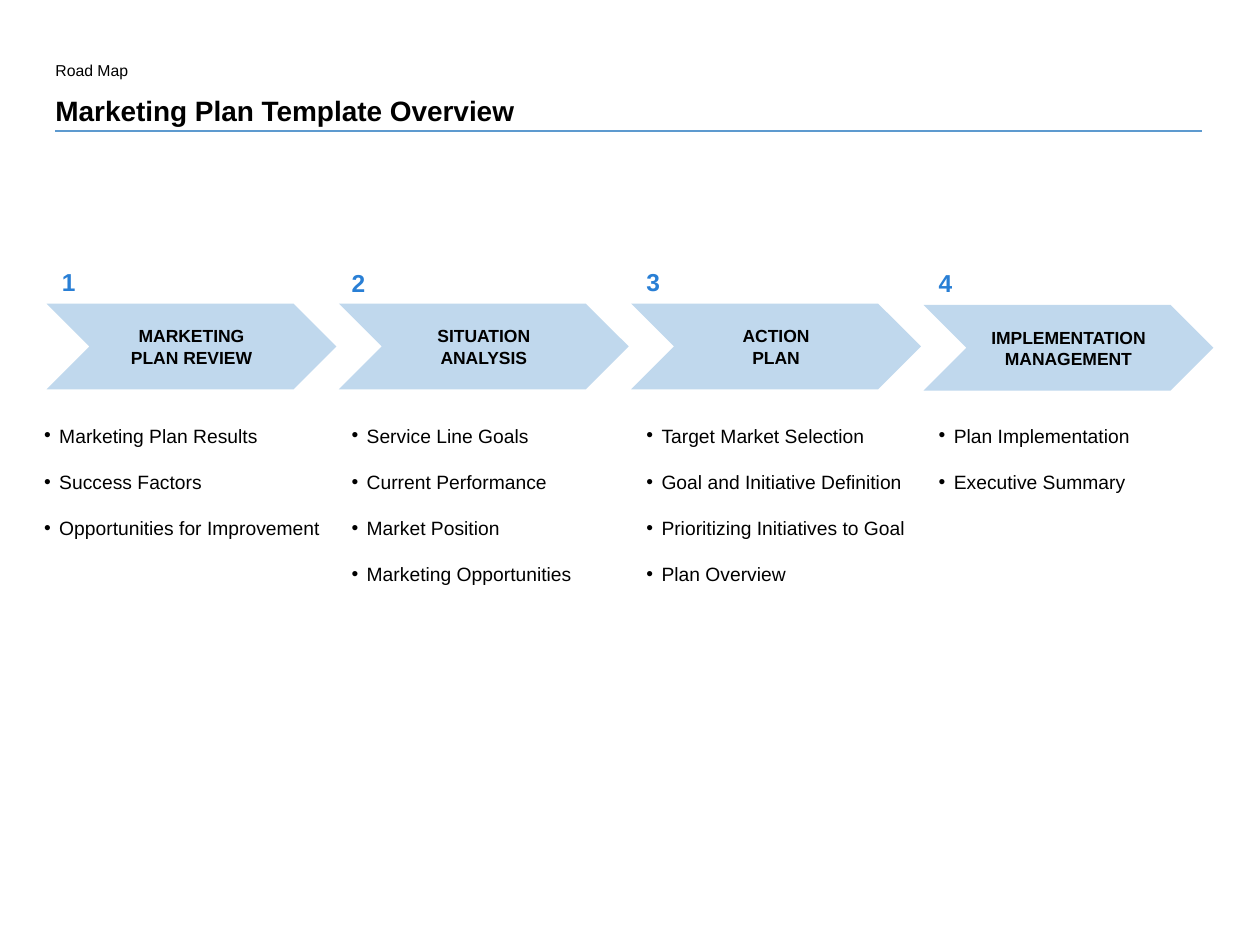
from lxml import etree
from pptx import Presentation
from pptx import util as u
from pptx.dml.color import RGBColor
from pptx.enum import shapes, text
from pptx.oxml import ns

COMPARISON_LAYOUT = 4  # a title and four body placeholders

# heading, number left, list left, list width, list items
STEPS = [
    ("MARKETING\vPLAN REVIEW", 0.44, 0.3, 2.37,
     ["Marketing Plan Results", "Success Factors", "Opportunities for Improvement"]),
    ("SITUATION ANALYSIS", 2.74, 2.74, 2.26,
     ["Service Line Goals", "Current Performance", "Market Position",
      "Marketing Opportunities"]),
    ("ACTION\nPLAN", 5.08, 5.08, 2.2,
     ["Target Market Selection", "Goal and Initiative Definition",
      "Prioritizing Initiatives to Goal", "Plan Overview"]),
    ("IMPLEMENTATION MANAGEMENT", 7.4, 7.4, 2.19,
     ["Plan Implementation", "Executive Summary"]),
]
CHEVRON_LEFT, CHEVRON_PITCH = 0.37, 2.32
NUMBER_TOPS = [2.07, 2.08, 2.07, 2.08]
CHEVRON_TOPS = [2.41, 2.41, 2.41, 2.42]


def color(hex_string):
    return RGBColor.from_string(hex_string)


class RoadMapSlide:
    FONT = "Arial"
    TEXT = "000000"
    NUMBER = "297FD5"
    CHEVRON = "C0D8ED"
    RULE = "5D9ACF"

    def __init__(self, presentation):
        layout = presentation.slide_layouts[COMPARISON_LAYOUT]
        self.slide = presentation.slides.add_slide(layout)

    def place(self, shape, left, top, width, height):
        shape.left, shape.top = u.Inches(left), u.Inches(top)
        shape.width, shape.height = u.Inches(width), u.Inches(height)

    def set_text(self, shape, wording, size, bold=False, ink=TEXT, inset=(0.05, 0.05),
                 anchor=text.MSO_ANCHOR.TOP, align=text.PP_ALIGN.LEFT, wrap=True):
        frame = shape.text_frame
        frame.text = wording
        frame.auto_size = text.MSO_AUTO_SIZE.NONE
        frame.word_wrap = wrap
        frame.vertical_anchor = anchor
        frame.margin_left = frame.margin_right = u.Inches(inset[0])
        frame.margin_top = frame.margin_bottom = u.Inches(inset[1])
        for paragraph in frame.paragraphs:
            paragraph.alignment = align
            paragraph.space_before = u.Pt(0)
            font = paragraph.font
            font.name, font.size, font.bold = self.FONT, u.Pt(size), bold
            font.color.rgb = color(ink)

    def title(self, wording, *box):
        shape = self.slide.shapes.title
        self.place(shape, *box)
        self.set_text(shape, wording, 16, bold=True, inset=(0, 0),
                      anchor=text.MSO_ANCHOR.BOTTOM)

    def label(self, wording, *box, **style):
        shape = self.slide.shapes.add_textbox(*map(u.Inches, box))
        self.set_text(shape, wording, **style)

    def rule(self, left, right, top):
        line = self.slide.shapes.add_connector(
            shapes.MSO_CONNECTOR.STRAIGHT,
            u.Inches(left), u.Inches(top), u.Inches(right), u.Inches(top))
        line.line.color.rgb = color(self.RULE)
        line.line.width = u.Pt(0.75)
        etree.SubElement(line._element.spPr, ns.qn("a:effectLst"))

    def chevron(self, wording, *box):
        shape = self.slide.shapes.add_shape(
            shapes.MSO_SHAPE.CHEVRON, *map(u.Inches, box))
        shape.shadow.inherit = False
        shape.fill.solid()
        shape.fill.fore_color.rgb = color(self.CHEVRON)
        shape.line.fill.background()
        self.set_text(shape, wording, 10, bold=True, inset=(0.14, 0.07),
                      anchor=text.MSO_ANCHOR.MIDDLE, align=text.PP_ALIGN.CENTER)

    def bullet_list(self, index, items, *box):
        """Fill the body placeholder with the given index."""
        shape = self.slide.placeholders[index]
        self.place(shape, *box)
        self.set_text(shape, "\n".join(items), 11)
        indent = u.Inches(0.12)
        for paragraph in shape.text_frame.paragraphs:
            paragraph.line_spacing = 2.0
            properties = paragraph._p.get_or_add_pPr()
            properties.set("marL", str(indent))
            properties.set("indent", str(-indent))
            bullet = etree.Element(ns.qn("a:buChar"), char="•")
            properties.find(ns.qn("a:defRPr")).addprevious(bullet)


def main():
    presentation = Presentation()
    presentation.slide_width = u.Inches(10)
    presentation.slide_height = u.Inches(7.5)
    page = RoadMapSlide(presentation)

    page.rule(0.44, 9.54, 1.04)
    page.label("Road Map", 0.44, 0.44, 2.89, 0.2, size=9, inset=(0, 0.04))
    page.title("Marketing Plan Template Overview", 0.44, 0.74, 9.09, 0.27)

    for step, (heading, number_left, list_left, list_width, items) in enumerate(STEPS):
        page.label(str(step + 1), number_left, NUMBER_TOPS[step], 0.21, 0.34,
                   size=14, bold=True, ink=page.NUMBER, wrap=False)
        page.chevron(heading, CHEVRON_LEFT + step * CHEVRON_PITCH,
                     CHEVRON_TOPS[step], 2.3, 0.68)
        list_height = 1.58 if len(items) == 4 else 1.21
        page.bullet_list(step + 1, items, list_left, 3.13, list_width, list_height)

    presentation.save("out.pptx")


if __name__ == "__main__":
    main()
